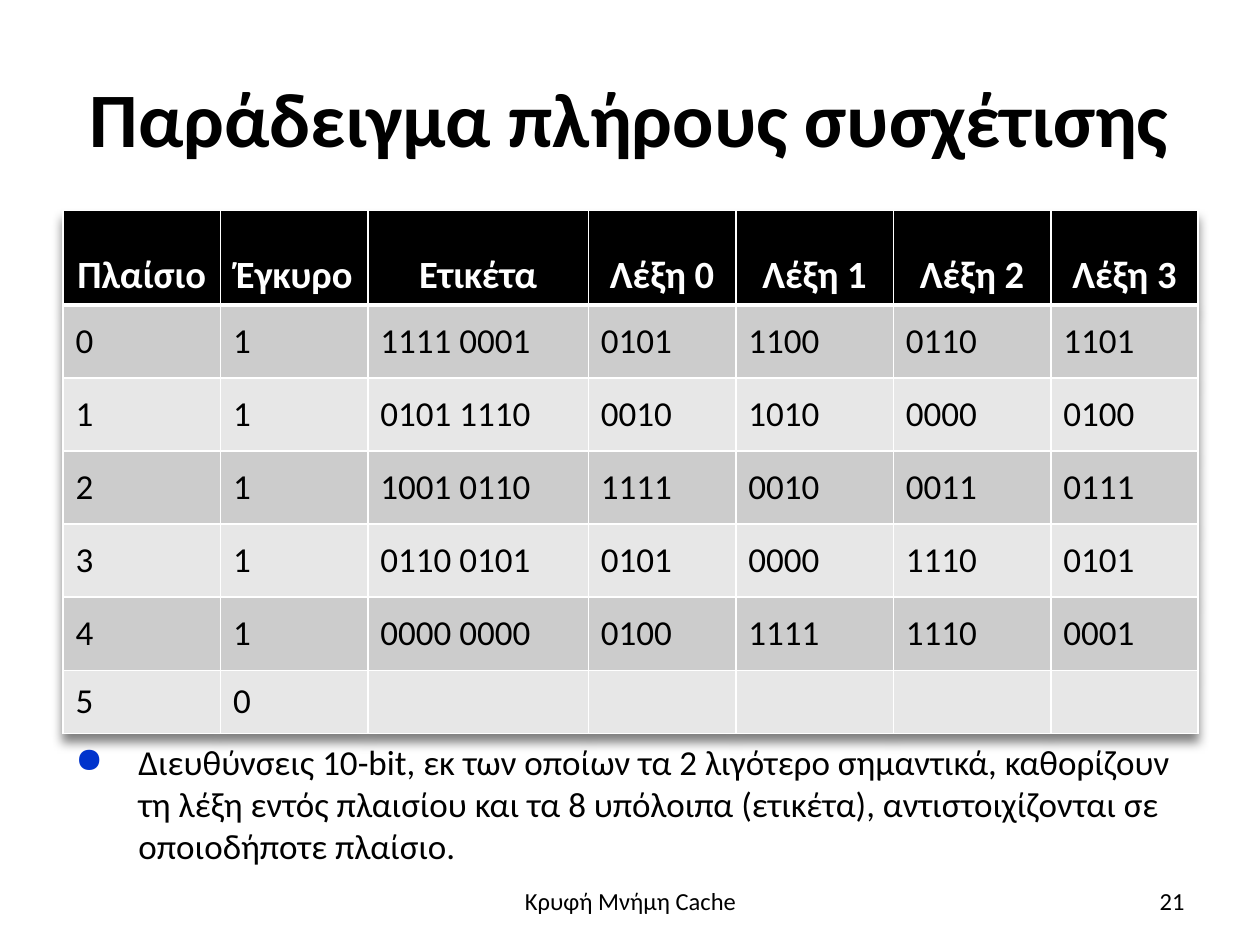
from lxml.etree import SubElement
from pptx import Presentation
from pptx.dml.color import RGBColor
from pptx.enum.text import MSO_ANCHOR, PP_ALIGN
from pptx.oxml import parse_xml
from pptx.oxml.ns import qn
from pptx.util import Inches, Pt

DRAWING = "http://schemas.openxmlformats.org/drawingml/2006/main"


def color(value):
    return RGBColor.from_string(value)


class SlideBuilder:
    font = "Calibri"
    ink = "000000"
    paper = "FFFFFF"
    bands = ("CCCCCC", "E7E7E7")
    bullet_color = "0033CC"

    def __init__(self, slide):
        self.slide = slide

    def styled_run(self, paragraph, text, size, ink, bold=False, align=PP_ALIGN.LEFT):
        paragraph.alignment = align
        run = paragraph.add_run()
        run.text = text
        run.font.name = self.font
        run.font.size = Pt(size)
        run.font.bold = bold
        run.font.color.rgb = color(ink)

    def text(self, box, text, size, align=PP_ALIGN.LEFT, bold=False,
             anchor=MSO_ANCHOR.MIDDLE, bullet=None):
        frame = self.slide.shapes.add_textbox(*map(Inches, box)).text_frame
        frame.word_wrap = True
        frame.vertical_anchor = anchor
        paragraph = frame.paragraphs[0]
        if bullet:
            self.bullet(paragraph, bullet)
        self.styled_run(paragraph, text, size, self.ink, bold, align)

    def bullet(self, paragraph, symbol):
        properties = paragraph._p.get_or_add_pPr()
        properties.set("marL", str(Inches(0.5)))
        properties.set("indent", str(-Inches(0.5)))
        bullet_fill = SubElement(properties, qn("a:buClr"))
        SubElement(bullet_fill, qn("a:srgbClr"), val=self.bullet_color)
        SubElement(properties, qn("a:buChar"), char=symbol)

    def border(self, cell, side, width):
        line = SubElement(cell._tc.get_or_add_tcPr(), qn(f"a:ln{side}"), w=str(Pt(width)))
        fill = SubElement(line, qn("a:solidFill"))
        SubElement(fill, qn("a:srgbClr"), val=self.paper)

    def cell(self, cell, text, row):
        header = row == 0
        for side in "LRTB":
            thick = (row, side) in ((0, "B"), (1, "T"))
            self.border(cell, side, 3 if thick else 1)
        cell.fill.solid()
        cell.fill.fore_color.rgb = color(self.ink if header else self.bands[(row - 1) % 2])
        cell.vertical_anchor = MSO_ANCHOR.BOTTOM if header else MSO_ANCHOR.MIDDLE
        paragraph = cell.text_frame.paragraphs[0]
        if header:
            self.styled_run(paragraph, text, 22, self.paper, True, PP_ALIGN.CENTER)
        elif text:
            self.styled_run(paragraph, text, 20, self.ink)

    def table(self, left, top, widths, heights, rows):
        frame = self.slide.shapes.add_table(
            len(rows), len(widths), Inches(left), Inches(top),
            Inches(sum(widths)), Inches(sum(heights)))
        table = frame.table
        for column, width in zip(table.columns, widths):
            column.width = Inches(width)
        for table_row, height in zip(table.rows, heights):
            table_row.height = Inches(height)
        for row, values in enumerate(rows):
            for column, value in enumerate(values):
                self.cell(table.cell(row, column), value, row)
        self.table_shadow(table)

    def table_shadow(self, table):
        shadow = parse_xml(
            f'<a:effectLst xmlns:a="{DRAWING}">'
            f'<a:outerShdw blurRad="{Pt(6)}" dist="{Pt(5)}" dir="5400000" rotWithShape="0">'
            f'<a:srgbClr val="{self.ink}"><a:alpha val="50000"/></a:srgbClr>'
            '</a:outerShdw></a:effectLst>')
        table._tbl.tblPr.insert(0, shadow)


def main():
    presentation = Presentation()
    presentation.slide_width = Inches(10)
    presentation.slide_height = Inches(7.5)
    builder = SlideBuilder(presentation.slides.add_slide(presentation.slide_layouts[6]))

    builder.text((0.5, 0.3, 9, 1.25), "Παράδειγμα πλήρους συσχέτισης", 44,
                 PP_ALIGN.CENTER, bold=True)

    cache_rows = [
        ("Πλαίσιο", "Έγκυρο", "Ετικέτα", "Λέξη 0", "Λέξη 1", "Λέξη 2", "Λέξη 3"),
        ("0", "1", "1111 0001", "0101", "1100", "0110", "1101"),
        ("1", "1", "0101 1110", "0010", "1010", "0000", "0100"),
        ("2", "1", "1001 0110", "1111", "0010", "0011", "0111"),
        ("3", "1", "0110 0101", "0101", "0000", "1110", "0101"),
        ("4", "1", "0000 0000", "0100", "1111", "1110", "0001"),
        ("5", "0", "", "", "", "", ""),
    ]
    column_widths = [1.25, 1.17, 1.75, 1.17, 1.25, 1.25, 1.17]
    row_heights = [0.75] + [0.58] * 5 + [0.5]
    builder.table(0.5, 1.67, column_widths, row_heights, cache_rows)

    builder.text((0.5, 5.83, 9, 1.11),
                 "Διευθύνσεις 10-bit, εκ των οποίων τα 2 λιγότερο σημαντικά, "
                 "καθορίζουν τη λέξη εντός πλαισίου και τα 8 υπόλοιπα (ετικέτα), "
                 "αντιστοιχίζονται σε οποιοδήποτε πλαίσιο.",
                 20, anchor=MSO_ANCHOR.TOP, bullet="●")
    builder.text((3.42, 6.95, 3.17, 0.4), "Κρυφή Μνήμη Cache", 14, PP_ALIGN.CENTER)
    builder.text((7.17, 6.95, 2.33, 0.4), "21", 14, PP_ALIGN.RIGHT)

    presentation.save("out.pptx")


if __name__ == "__main__":
    main()
